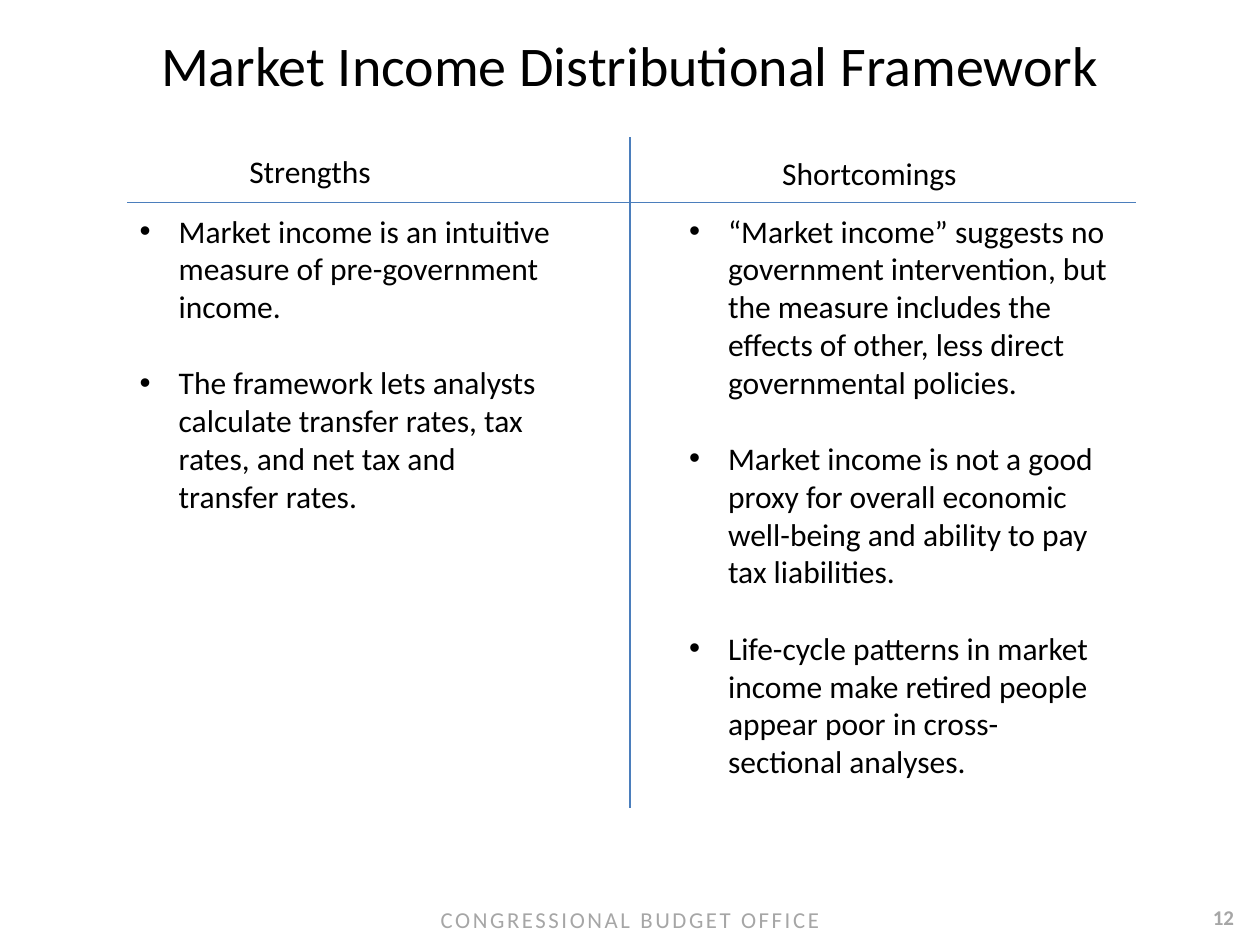
from dataclasses import dataclass

from lxml import etree
from pptx import Presentation
from pptx.dml.color import RGBColor
from pptx.enum import shapes, text
from pptx.oxml import ns
from pptx.util import Inches, Pt


@dataclass(frozen=True)
class Theme:
    font: str = "Calibri"
    ink: str = "000000"
    muted: str = "A6A6A6"
    rule: str = "4B7EBC"
    title: float = 32
    body: float = 18
    footer: float = 13
    number: float = 12
    rule_width: float = 0.75
    bullet_gap: float = 22


THEME = Theme()
CENTER = text.PP_ALIGN.CENTER


def add_run(p, words, size, color=THEME.ink, bold=False):
    r = p.add_run()
    r.text = words
    r.font.name = THEME.font
    r.font.size = Pt(size)
    r.font.bold = bold
    r.font.color.rgb = RGBColor.from_string(color)
    return r


def add_box(slide, box, wrap=True):
    tf = slide.shapes.add_textbox(*map(Inches, box)).text_frame
    tf.word_wrap = wrap
    return tf


def add_rule(slide, x1, y1, x2, y2):
    line = slide.shapes.add_connector(
        shapes.MSO_CONNECTOR.STRAIGHT, *map(Inches, (x1, y1, x2, y2)))
    line.line.color.rgb = RGBColor.from_string(THEME.rule)
    line.line.width = Pt(THEME.rule_width)
    etree.SubElement(line._element.spPr, ns.qn("a:effectLst"))


def set_bullet(p, indent=0.31):
    pPr = p._p.get_or_add_pPr()
    pPr.set("marL", str(Inches(indent)))
    pPr.set("indent", str(-Inches(indent)))
    etree.SubElement(pPr, ns.qn("a:buFont")).set("typeface", "Arial")
    etree.SubElement(pPr, ns.qn("a:buChar")).set("char", "•")


def add_title(slide, box, words):
    title = slide.shapes.title
    title.left, title.top, title.width, title.height = map(Inches, box)
    tf = title.text_frame
    tf.auto_size = text.MSO_AUTO_SIZE.NONE
    tf.vertical_anchor = text.MSO_ANCHOR.TOP
    p = tf.paragraphs[0]
    p.alignment = CENTER
    add_run(p, words, THEME.title)


def add_column(slide, heading_box, heading, list_box, points):
    tf = add_box(slide, heading_box, wrap=False)
    add_run(tf.paragraphs[0], heading, THEME.body)

    tf = add_box(slide, list_box)
    for i, point in enumerate(points):
        p = tf.add_paragraph() if i else tf.paragraphs[0]
        set_bullet(p)
        if i:
            p.space_before = Pt(THEME.bullet_gap)
        add_run(p, point, THEME.body)


def add_footer(slide, box, words, number_box, number):
    tf = add_box(slide, box)
    tf.margin_top = Inches(0.1)
    tf.vertical_anchor = text.MSO_ANCHOR.MIDDLE
    p = tf.paragraphs[0]
    p.alignment = CENTER
    r = add_run(p, words, THEME.footer, THEME.muted)
    r.font._element.set("spc", "150")

    p = add_box(slide, number_box).paragraphs[0]
    p.alignment = CENTER
    add_run(p, number, THEME.number, THEME.muted, bold=True)


def main():
    prs = Presentation()
    prs.slide_width, prs.slide_height = Inches(10), Inches(7.5)
    slide = prs.slides.add_slide(prs.slide_layouts[5])

    add_title(slide, (0, 0.19, 10, 0.64), "Market Income Distributional Framework")
    add_rule(slide, 1.01, 1.61, 9.02, 1.61)
    add_rule(slide, 5, 1.09, 5, 6.41)
    add_column(slide, (1.88, 1.16, 1.18, 0.4), "Strengths", (1.01, 1.63, 3.52, 2.83), [
        "Market income is an intuitive measure of pre-government income.",
        "The framework lets analysts calculate transfer rates, tax rates, "
        "and net tax and transfer rates.",
    ])
    add_column(slide, (6.11, 1.17, 1.6, 0.4), "Shortcomings", (5.37, 1.63, 3.52, 4.64), [
        "“Market income” suggests no government intervention, but the measure "
        "includes the effects of other, less direct governmental policies.",
        "Market income is not a good proxy for overall economic well-being "
        "and ability to pay tax liabilities.",
        "Life-cycle patterns in market income make retired people appear poor "
        "in cross-sectional analyses.",
    ])
    add_footer(slide, (0, 7.08, 10, 0.38), "CONGRESSIONAL BUDGET OFFICE",
               (9.42, 7.13, 0.58, 0.31), "12")
    prs.save("out.pptx")


if __name__ == "__main__":
    main()
